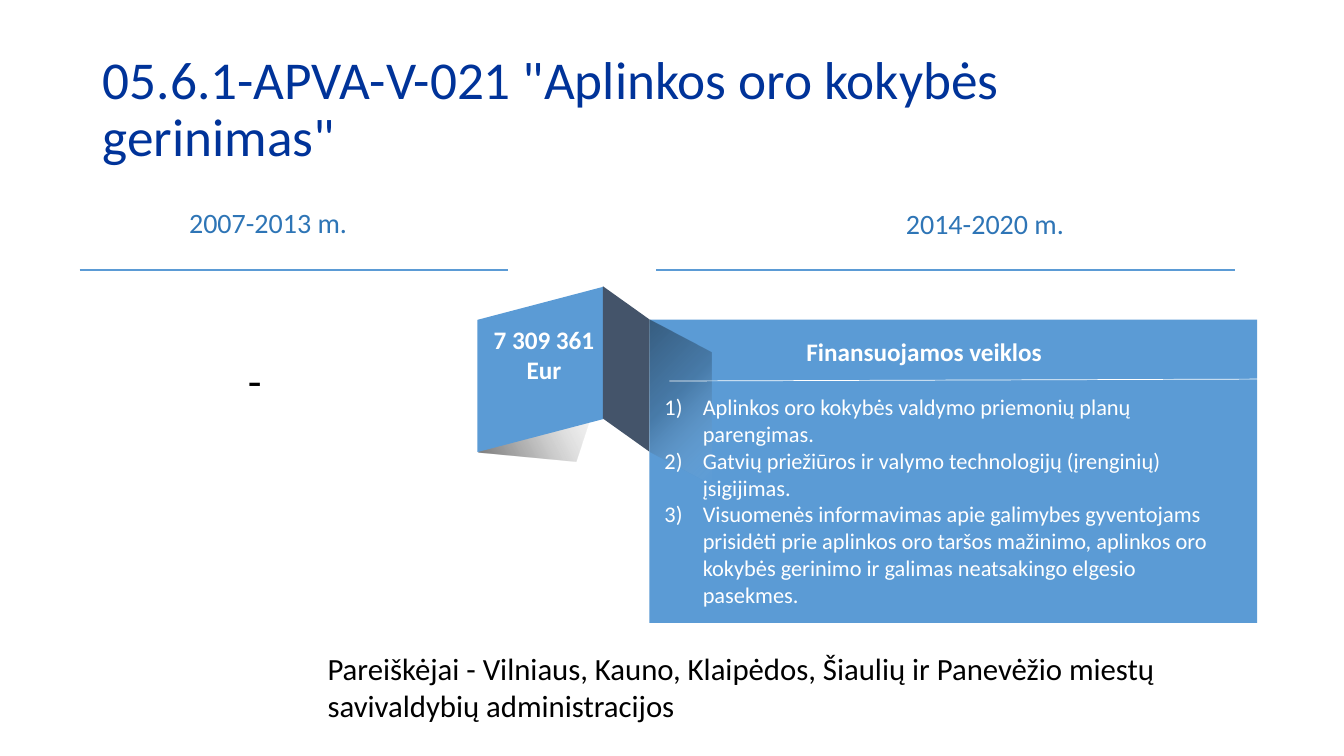
"""Builds a slide comparing two funding periods for the air quality measure."""
from lxml import etree
from pptx import Presentation
from pptx.dml.color import RGBColor
from pptx.enum.shapes import MSO_CONNECTOR, MSO_SHAPE
from pptx.enum.text import MSO_ANCHOR, MSO_AUTO_SIZE, PP_ALIGN
from pptx.oxml import parse_xml
from pptx.oxml.ns import nsdecls, qn
from pptx.util import Inches, Pt

LEFT, CENTER = PP_ALIGN.LEFT, PP_ALIGN.CENTER
TOP, MIDDLE = MSO_ANCHOR.TOP, MSO_ANCHOR.MIDDLE
NO_AUTOFIT = MSO_AUTO_SIZE.NONE
RECTANGLE, PARALLELOGRAM = MSO_SHAPE.RECTANGLE, MSO_SHAPE.FLOWCHART_DATA
STRAIGHT = MSO_CONNECTOR.STRAIGHT

FONT = "Calibri"
COLORS = {"title": "003399", "period": "2E75B6", "panel": "5B9BD5",
          "fold": "44546A", "white": "FFFFFF", "black": "000000"}

TITLE = '05.6.1-APVA-V-021 "Aplinkos oro kokybės gerinimas"'
ACTIVITIES = [
    "Aplinkos oro kokybės valdymo priemonių planų parengimas.",
    "Gatvių priežiūros ir valymo technologijų (įrenginių) įsigijimas.",
    "Visuomenės informavimas apie galimybes gyventojams prisidėti prie aplinkos oro taršos "
    "mažinimo, aplinkos oro kokybės gerinimo ir galimas neatsakingo elgesio pasekmes.",
]
# text, (left, top, width, height), size, color, bold, alignment
LABELS = [
    ("2007-2013 m.", (1.07, 1.99, 3.18, 0.54), 20, "period", False, CENTER),
    ("2014-2020 m.", (8.12, 2, 3.3, 0.54), 20, "period", False, CENTER),
    ("7 309 361 Eur", (4.6, 3.17, 1.59, 0.86), 18, "white", True, CENTER),
    ("Finansuojamos veiklos", (7.9, 3.29, 4.5, 0.49), 18, "white", True, LEFT),
    ("Pareiškėjai - Vilniaus, Kauno, Klaipėdos, Šiaulių ir Panevėžio miestų "
     "savivaldybių administracijos", (3.15, 6.4, 9.49, 0.84), 22, "black", False, LEFT),
    ("-", (2.36, 3.45, 0.34, 0.64), 32, "black", False, LEFT),
]
# preset, (left, top, width, height), rotation, flips, color or opacity of the shadow's dark end
RIBBON = [
    (PARALLELOGRAM, (4.82, 3.64, 1.09, 0.95), 288.3, ["flipV"], 57),
    (PARALLELOGRAM, (4.54, 3.04, 1.64, 1.25), 90, ["flipH"], "panel"),
    (PARALLELOGRAM, (5.39, 3.43, 1.64, 0.46), 270, ["flipH", "flipV"], "fold"),
    (RECTANGLE, (6.44, 3.17, 6.03, 3.01), 0, [], "panel"),
    (PARALLELOGRAM, (5.93, 3.68, 1.64, 0.62), 90, [], 40),
]
# start, end, color, width
RULES = [
    ((6.64, 3.78), (12.74, 3.76), "white", 0.5),
    ((0.79, 2.68), (5.04, 2.68), "panel", 1.5),
    ((6.51, 2.68), (12.25, 2.68), "panel", 1.5),
]


def rgb(name):
    return RGBColor.from_string(COLORS[name])


def add_run(paragraph, text, size, color, bold=False):
    run = paragraph.add_run()
    run.text = text
    run.font.name, run.font.size, run.font.bold = FONT, Pt(size), bold
    run.font.color.rgb = rgb(color)


def place(shape, box):
    shape.left, shape.top, shape.width, shape.height = map(Inches, box)


def shadow_fill(opacity):
    stops = "".join(
        f'<a:gs pos="{position * 1000}"><a:srgbClr val="{COLORS[color]}">'
        f'<a:alpha val="{alpha * 1000}"/></a:srgbClr></a:gs>'
        for position, color, alpha in [(0, "white", 0), (54, "black", 20), (100, "black", opacity)])
    return parse_xml(f'<a:gradFill rotWithShape="1" {nsdecls("a")}><a:gsLst>{stops}</a:gsLst>'
                     '<a:lin ang="8100000" scaled="0"/></a:gradFill>')


def add_ribbon_part(slide, preset, box, rotation, flips, paint):
    shape = slide.shapes.add_shape(preset, *map(Inches, box))
    shape.shadow.inherit = False
    shape.rotation = rotation
    shape.line.fill.background()
    properties = shape._element.spPr
    for flip in flips:
        properties.find(qn("a:xfrm")).set(flip, "1")
    if paint in COLORS:
        shape.fill.solid()
        shape.fill.fore_color.rgb = rgb(paint)
    else:
        properties.find(qn("a:prstGeom")).addnext(shadow_fill(paint))


def add_rule(slide, start, end, color, width):
    rule = slide.shapes.add_connector(STRAIGHT, *map(Inches, start + end))
    rule.line.color.rgb = rgb(color)
    rule.line.width = Pt(width)
    etree.SubElement(rule._element.spPr, qn("a:effectLst"))


def add_label(slide, text, box, size, color, bold, alignment):
    label = slide.shapes.add_textbox(*map(Inches, box))
    label.text_frame.word_wrap = True
    paragraph = label.text_frame.paragraphs[0]
    paragraph.alignment = alignment
    add_run(paragraph, text, size, color, bold)


def fill_title(title):
    place(title, (0.92, 0.37, 11.4, 1.46))
    frame = title.text_frame
    frame.auto_size, frame.vertical_anchor = NO_AUTOFIT, MIDDLE
    paragraph = frame.paragraphs[0]
    paragraph.alignment, paragraph.line_spacing = LEFT, 0.9
    add_run(paragraph, TITLE, 38, "title")


def fill_activities(body):
    place(body, (6.49, 3.85, 5.66, 2.26))
    frame = body.text_frame
    frame.auto_size, frame.vertical_anchor = NO_AUTOFIT, TOP
    for index, activity in enumerate(ACTIVITIES):
        paragraph = frame.add_paragraph() if index else frame.paragraphs[0]
        paragraph.space_before = Pt(0)
        properties = paragraph._p.get_or_add_pPr()
        properties.set("marL", str(Inches(0.38)))
        properties.set("indent", str(-Inches(0.38)))
        etree.SubElement(properties, qn("a:buFont")).set("typeface", FONT)
        etree.SubElement(properties, qn("a:buAutoNum")).set("type", "arabicParenR")
        add_run(paragraph, activity, 16, "white")


def main():
    presentation = Presentation()
    presentation.slide_width, presentation.slide_height = Inches(13.33), Inches(7.5)
    slide = presentation.slides.add_slide(presentation.slide_layouts[1])
    body = slide.placeholders[1]
    fill_title(slide.shapes.title)
    fill_activities(body)
    for part in RIBBON:
        add_ribbon_part(slide, *part)
    slide.shapes._spTree.append(body._element)
    for rule in RULES:
        add_rule(slide, *rule)
    for label in LABELS:
        add_label(slide, *label)
    presentation.save("out.pptx")


if __name__ == "__main__":
    main()
